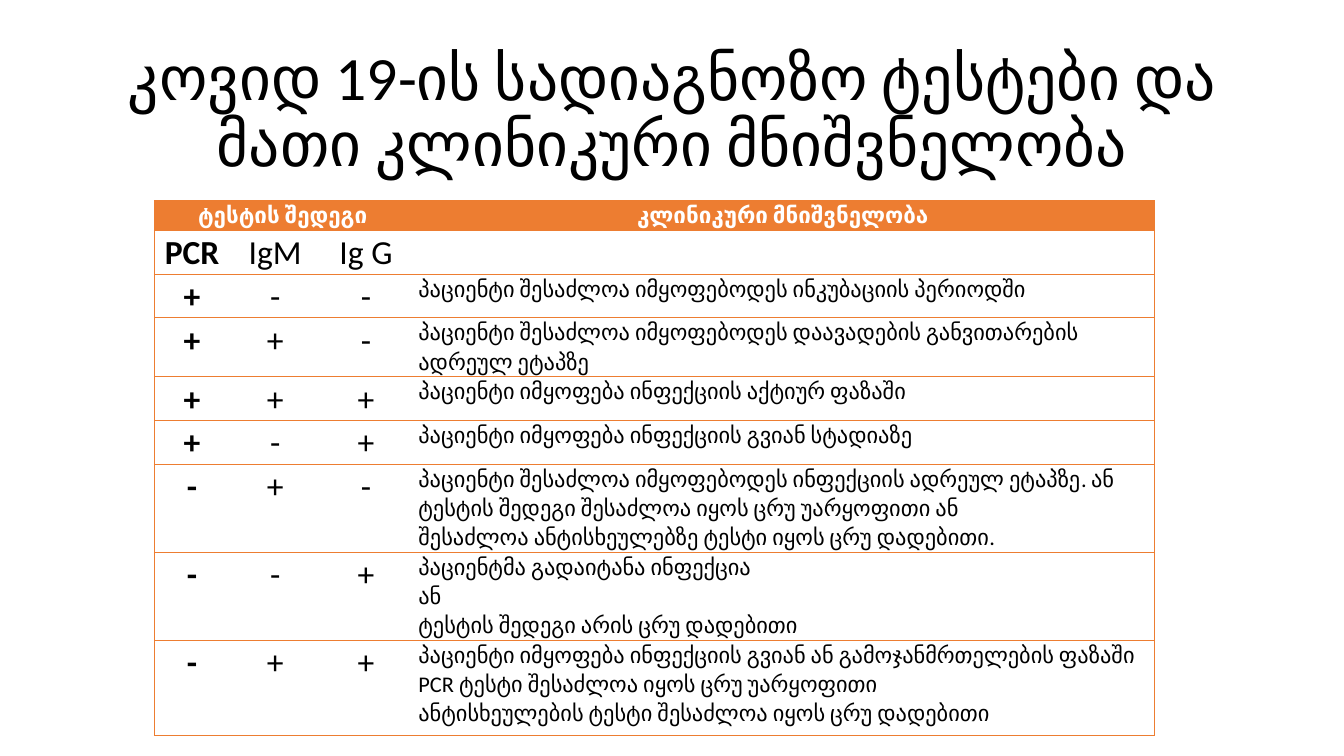
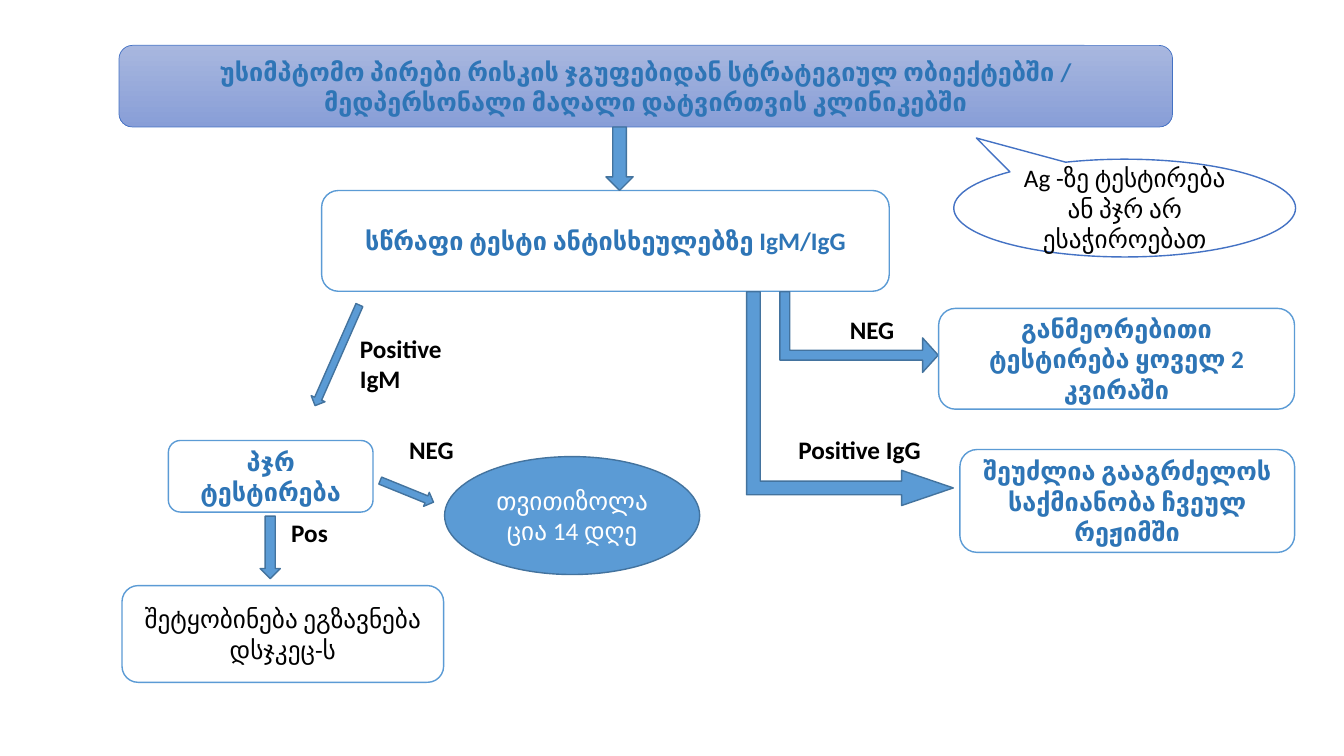
from dataclasses import dataclass

from lxml.etree import SubElement
from pptx import Presentation
from pptx.dml.color import RGBColor
from pptx.enum.shapes import MSO_SHAPE
from pptx.enum.text import MSO_ANCHOR, MSO_AUTO_SIZE, PP_ALIGN
from pptx.oxml.ns import qn
from pptx.util import Pt

EMU_PER_PX = 9144


@dataclass(frozen=True)
class Theme:
    font: str = "Calibri"
    black: str = "000000"
    white: str = "FFFFFF"
    orange: str = "ED7D31"
    blue: str = "5B9BD5"
    blue_edge: str = "43739E"
    blue_text: str = "2E75B6"
    indigo: str = "4472C4"
    band_top: str = "A8B7DF"
    band_bottom: str = "889ED7"
    title_size: int = 44
    result_size: int = 24
    flow_size: int = 18
    table_size: int = 16


@dataclass(frozen=True)
class Box:
    left: int
    top: int
    width: int
    height: int

    def inside(self, left, top, width, height):
        return Box(self.left + left, self.top + top, width, height)

    def emu(self):
        return [px(length) for length in (self.left, self.top, self.width, self.height)]


THEME = Theme()

RESULT_ROWS = [
    ("PCR", "IgM", "Ig G", []),
    ("+", "-", "-", ["პაციენტი შესაძლოა იმყოფებოდეს ინკუბაციის პერიოდში"]),
    ("+", "+", "-", ["პაციენტი შესაძლოა იმყოფებოდეს დაავადების განვითარების ადრეულ ეტაპზე"]),
    ("+", "+", "+", ["პაციენტი იმყოფება ინფექციის აქტიურ ფაზაში"]),
    ("+", "-", "+", ["პაციენტი იმყოფება ინფექციის გვიან სტადიაზე"]),
    ("-", "+", "-", [
        "პაციენტი შესაძლოა იმყოფებოდეს ინფექციის ადრეულ ეტაპზე. ან ტესტის შედეგი შესაძლოა იყოს ცრუ უარყოფითი ან",
        "შესაძლოა ანტისხეულებზე ტესტი იყოს ცრუ დადებითი.",
    ]),
    ("-", "-", "+", [
        "პაციენტმა გადაიტანა ინფექცია",
        "ან",
        "ტესტის შედეგი არის ცრუ დადებითი",
    ]),
    ("-", "+", "+", [
        "პაციენტი იმყოფება ინფექციის გვიან ან გამოჯანმრთელების ფაზაში",
        "PCR ტესტი შესაძლოა იყოს ცრუ უარყოფითი",
        "ანტისხეულების ტესტი შესაძლოა იყოს ცრუ დადებითი",
    ]),
]
COLUMN_WIDTHS = [75, 90, 90, 737]
ROW_HEIGHTS = [23, 23, 23, 47, 23, 23, 71, 71, 95]


def px(length):
    return int(length * EMU_PER_PX)


def rgb(color):
    return RGBColor.from_string(color)


def apply(target, formats):
    for name, value in formats.items():
        setattr(target, name, value)


def write(frame, lines, size, color, bold=False, align=PP_ALIGN.CENTER, spacing=None):
    for index, line in enumerate(lines):
        paragraph = frame.add_paragraph() if index else frame.paragraphs[0]
        apply(paragraph, {"alignment": align, "line_spacing": spacing})
        run = paragraph.add_run()
        run.text = line
        apply(run.font, {"name": THEME.font, "size": Pt(size), "bold": bold})
        run.font.color.rgb = rgb(color)


def add_title(slide, box, text):
    title = slide.shapes.title
    apply(title, dict(zip(("left", "top", "width", "height"), box.emu())))
    apply(title.text_frame, {"word_wrap": True, "vertical_anchor": MSO_ANCHOR.MIDDLE})
    write(title.text_frame, [text], THEME.title_size, THEME.black, spacing=0.9)


def set_borders(cell, colors):
    properties = cell._tc.get_or_add_tcPr()
    for side in "LRTB":
        line = SubElement(properties, qn(f"a:ln{side}"), w=str(Pt(0.5)))
        if colors.get(side):
            fill = SubElement(line, qn("a:solidFill"))
            SubElement(fill, qn("a:srgbClr"), val=colors[side])
        else:
            SubElement(line, qn("a:noFill"))


def format_cell(cell, row, column):
    set_borders(cell, {
        "L": THEME.orange if column == 0 else None,
        "R": THEME.orange if column == len(COLUMN_WIDTHS) - 1 else None,
        "T": THEME.orange,
        "B": THEME.orange,
    })
    cell.fill.solid()
    cell.fill.fore_color.rgb = rgb(THEME.white if row else THEME.orange)
    apply(cell, {"margin_left": px(7), "margin_right": px(7), "margin_top": 0, "margin_bottom": 0})


def add_results_table(slide, box):
    frame = slide.shapes.add_table(len(ROW_HEIGHTS), len(COLUMN_WIDTHS), *box.emu())
    table = frame.table
    apply(table, {"first_row": False, "horz_banding": False})
    for column, width in zip(table.columns, COLUMN_WIDTHS):
        column.width = px(width)
    for row, height in zip(table.rows, ROW_HEIGHTS):
        row.height = px(height)
    for row in range(len(ROW_HEIGHTS)):
        for column in range(len(COLUMN_WIDTHS)):
            format_cell(table.cell(row, column), row, column)
    table.cell(0, 0).merge(table.cell(0, 2))
    for column, heading in ((0, "ტესტის შედეგი"), (3, "კლინიკური მნიშვნელობა")):
        write(table.cell(0, column).text_frame, [heading], THEME.table_size, THEME.white,
              bold=True, spacing=1.07)
    for row, (*results, meaning) in enumerate(RESULT_ROWS, start=1):
        for column, result in enumerate(results):
            write(table.cell(row, column).text_frame, [result], THEME.result_size, THEME.black,
                  bold=column == 0, spacing=1.07)
        write(table.cell(row, 3).text_frame, meaning, THEME.table_size, THEME.black,
              align=PP_ALIGN.LEFT, spacing=1.07)


def add_figure(slide, kind, box, fill=THEME.white, edge=THEME.blue, rotation=0, adjustments=()):
    shape = slide.shapes.add_shape(kind, *box.emu())
    shape.shadow.inherit = False
    shape.rotation = rotation
    shape.fill.solid()
    shape.fill.fore_color.rgb = rgb(fill)
    shape.line.color.rgb = rgb(edge)
    shape.line.width = Pt(1)
    for index, value in enumerate(adjustments):
        shape.adjustments[index] = value
    return shape


def add_step(slide, box, lines, kind=MSO_SHAPE.ROUNDED_RECTANGLE, color=THEME.blue_text,
             bold=True, **look):
    shape = add_figure(slide, kind, box, **look)
    apply(shape.text_frame, {"word_wrap": True, "vertical_anchor": MSO_ANCHOR.MIDDLE})
    write(shape.text_frame, lines, THEME.flow_size, color, bold)
    return shape


def add_arrow(slide, box, rotation, kind=MSO_SHAPE.RIGHT_ARROW, adjustments=()):
    add_figure(slide, kind, box, THEME.blue, THEME.blue_edge, rotation, adjustments)


def add_label(slide, box, text, align=PP_ALIGN.LEFT):
    label = slide.shapes.add_textbox(*box.emu())
    apply(label.text_frame, {"word_wrap": True, "auto_size": MSO_AUTO_SIZE.SHAPE_TO_FIT_TEXT})
    write(label.text_frame, [text], THEME.flow_size, THEME.black, True, align)


def add_screening(slide, box):
    band = add_step(slide, box.inside(0, 0, 1045, 81), [
        "უსიმპტომო პირები რისკის ჯგუფებიდან სტრატეგიულ ობიექტებში /",
        "მედპერსონალი მაღალი დატვირთვის კლინიკებში",
    ], edge=THEME.indigo)
    band.line.width = Pt(0.5)
    band.fill.gradient()
    band.fill.gradient_angle = 270
    for stop, color in zip(band.fill.gradient_stops, (THEME.band_top, THEME.band_bottom)):
        stop.color.rgb = rgb(color)
    add_step(slide, box.inside(201, 144, 563, 100), ["სწრაფი ტესტი ანტისხეულებზე IgM/IgG"])
    add_arrow(slide, box.inside(465, 99, 63, 27), 90)
    add_step(slide, box.inside(828, 113, 339, 97), ["Ag -ზე ტესტირება ან პჯრ არ ესაჭიროებათ"],
             MSO_SHAPE.OVAL_CALLOUT, THEME.black, False,
             edge=THEME.indigo, adjustments=(-0.434, -0.717))


def add_igm_branch(slide, box):
    add_arrow(slide, box.inside(162, 55, 109, 15), 113.8)
    add_label(slide, box.inside(229, 36, 121, 71), "Positive IgM")
    add_step(slide, box.inside(49, 147, 203, 71), ["პჯრ ტესტირება"])
    add_arrow(slide, box.inside(257, 190, 57, 15), 22.1)
    add_label(slide, box.inside(278, 136, 73, 40), "NEG")
    add_step(slide, box.inside(323, 163, 253, 117), ["თვითიზოლაცია 14 დღე"], MSO_SHAPE.OVAL,
             THEME.white, False, fill=THEME.blue, edge=THEME.blue_edge)
    add_arrow(slide, box.inside(119, 243, 62, 20), 90)
    add_label(slide, box.inside(161, 218, 61, 40), "Pos")
    add_step(slide, box.inside(3, 291, 319, 96), ["შეტყობინება ეგზავნება დსჯკეც-ს"],
             color=THEME.black, bold=False)


def add_igg_branch(slide, box):
    add_arrow(slide, box.inside(0, 3, 212, 205), 90, MSO_SHAPE.BENT_UP_ARROW, (0.066, 0.085, 0.25))
    add_arrow(slide, box.inside(75, -39, 80, 157), 90, MSO_SHAPE.BENT_UP_ARROW, (0.122, 0.214, 0.194))
    add_label(slide, box.inside(96, 17, 73, 40), "NEG")
    add_label(slide, box.inside(29, 136, 173, 40), "Positive IgG", PP_ALIGN.CENTER)
    add_step(slide, box.inside(194, 16, 353, 100), ["განმეორებითი ტესტირება ყოველ 2 კვირაში"])
    add_step(slide, box.inside(215, 156, 332, 102), ["შეუძლია გააგრძელოს საქმიანობა ჩვეულ რეჟიმში"])


def build_results_slide(presentation):
    slide = presentation.slides.add_slide(presentation.slide_layouts[5])
    add_title(slide, Box(92, 40, 1150, 145), "კოვიდ 19-ის სადიაგნოზო ტესტები და მათი კლინიკური მნიშვნელობა")
    add_results_table(slide, Box(153, 199, sum(COLUMN_WIDTHS), sum(ROW_HEIGHTS)))


def build_flow_slide(presentation):
    slide = presentation.slides.add_slide(presentation.slide_layouts[6])
    add_screening(slide, Box(118, 45, 1167, 244))
    add_igm_branch(slide, Box(118, 290, 576, 387))
    add_igg_branch(slide, Box(737, 290, 547, 258))


def main():
    presentation = Presentation()
    apply(presentation, {"slide_width": px(1333), "slide_height": px(750)})
    build_results_slide(presentation)
    build_flow_slide(presentation)
    presentation.save("out.pptx")


if __name__ == "__main__":
    main()
